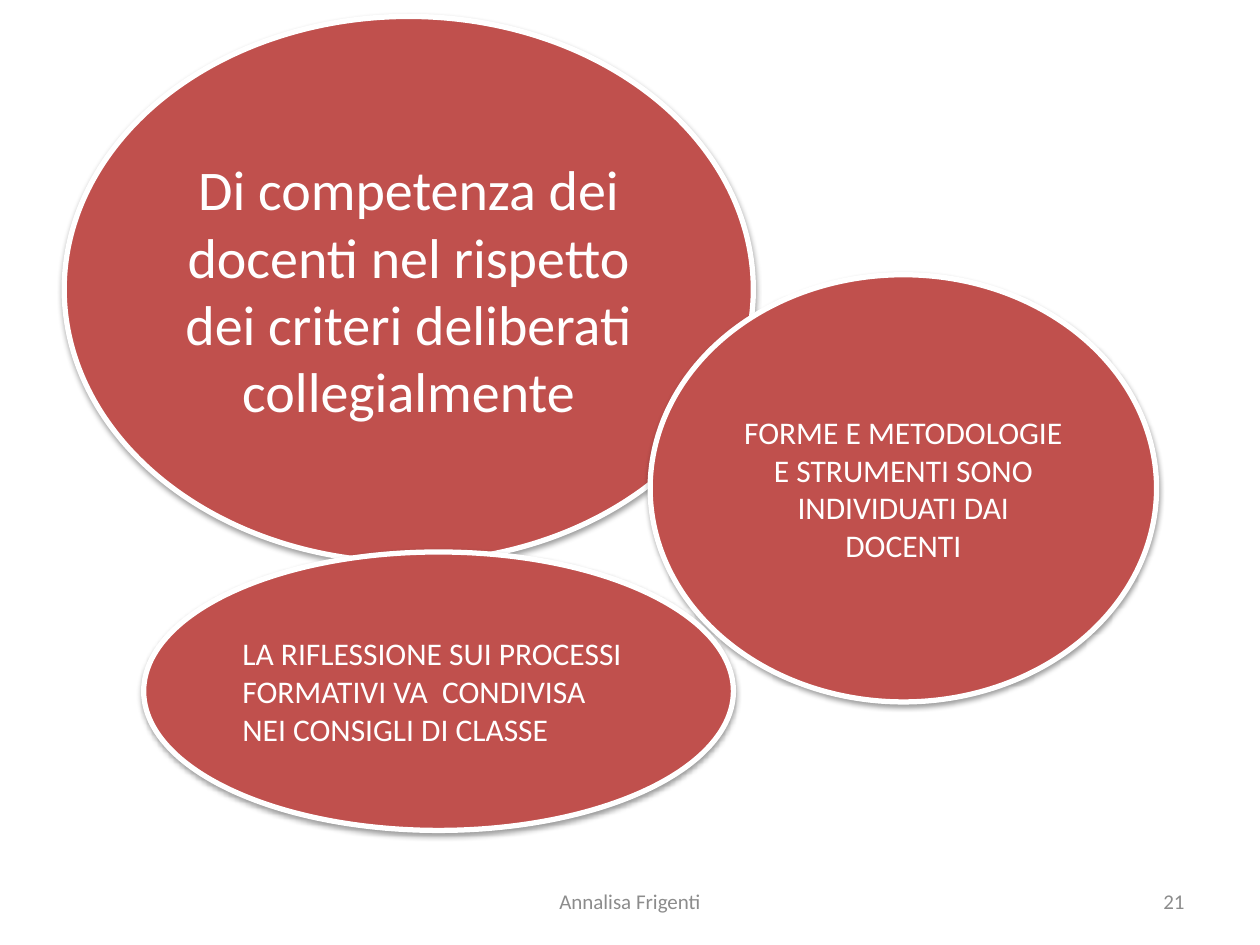
import pptx
import pptx.util
import pptx.dml.color
import pptx.enum.shapes
import pptx.enum.text
import pptx.oxml

Pt = pptx.util.Pt
RGB = pptx.dml.color.RGBColor
ALIGN = pptx.enum.text.PP_ALIGN
MIDDLE = pptx.enum.text.MSO_ANCHOR.MIDDLE
OVAL = pptx.enum.shapes.MSO_SHAPE.OVAL

RED = RGB(0xC0, 0x50, 0x4D)
WHITE = RGB(0xFF, 0xFF, 0xFF)
GREY = RGB(0x8C, 0x8C, 0x8C)

SHADOW = (
    '<a:outerShdw xmlns:a="http://schemas.openxmlformats.org/drawingml/2006/main"'
    ' blurRad="40000" dist="20000" dir="5400000" rotWithShape="0">'
    '<a:srgbClr val="000000"><a:alpha val="38000"/></a:srgbClr></a:outerShdw>'
)

# box (left, top, width, height), text, size, alignment, space before
OVALS = [
    ((36.7, 9.4, 393.8, 311.8),
     "Di competenza dei docenti nel rispetto dei criteri deliberati collegialmente",
     32, ALIGN.CENTER, 6.4),
    ((371.5, 157, 289.4, 244.1),
     "FORME E METODOLOGIE E STRUMENTI SONO INDIVIDUATI DAI DOCENTI",
     18, ALIGN.CENTER, 0),
    ((82.1, 315.4, 337, 159.1),
     "LA RIFLESSIONE SUI PROCESSI FORMATIVI VA  CONDIVISA NEI CONSIGLI DI CLASSE",
     18, ALIGN.LEFT, 0),
]


def set_all(obj, values):
    for name, value in values.items():
        setattr(obj, name, value)


def write(shape, text, size, color, align, before=0):
    frame = shape.text_frame
    set_all(frame, {"word_wrap": True, "vertical_anchor": MIDDLE})
    para = frame.paragraphs[0]
    set_all(para, {"alignment": align, "space_before": Pt(before)})
    run = para.add_run()
    set_all(run, {"text": text})
    set_all(run.font, {"name": "Calibri", "size": Pt(size)})
    run.font.color.rgb = color


def add_oval(slide, box, text, size, align, before):
    oval = slide.shapes.add_shape(OVAL, *map(Pt, box))
    oval.fill.solid()
    oval.fill.fore_color.rgb = RED
    oval.line.color.rgb = WHITE
    oval.line.width = Pt(3)
    oval.shadow.inherit = False
    effects = oval._element.spPr.find(pptx.oxml.ns.qn("a:effectLst"))
    effects.append(pptx.oxml.parse_xml(SHADOW))
    write(oval, text, size, WHITE, align, before)


def add_footer(slide, left, top, width, height):
    """Place the centred author and the page number at the right edge."""
    parts = [
        (left, 228, "Annalisa Frigenti", ALIGN.CENTER),
        (left + width - 168, 168, "21", ALIGN.RIGHT),
    ]
    for x, wide, text, align in parts:
        label = slide.shapes.add_textbox(Pt(x), Pt(top), Pt(wide), Pt(height))
        write(label, text, 12, GREY, align)


def main():
    deck = pptx.Presentation()
    set_all(deck, {"slide_width": Pt(720), "slide_height": Pt(540)})
    slide = deck.slides.add_slide(deck.slide_layouts[6])
    add_footer(slide, 246, 500.5, 438, 28.75)
    for oval in OVALS:
        add_oval(slide, *oval)
    deck.save("out.pptx")


if __name__ == "__main__":
    main()
